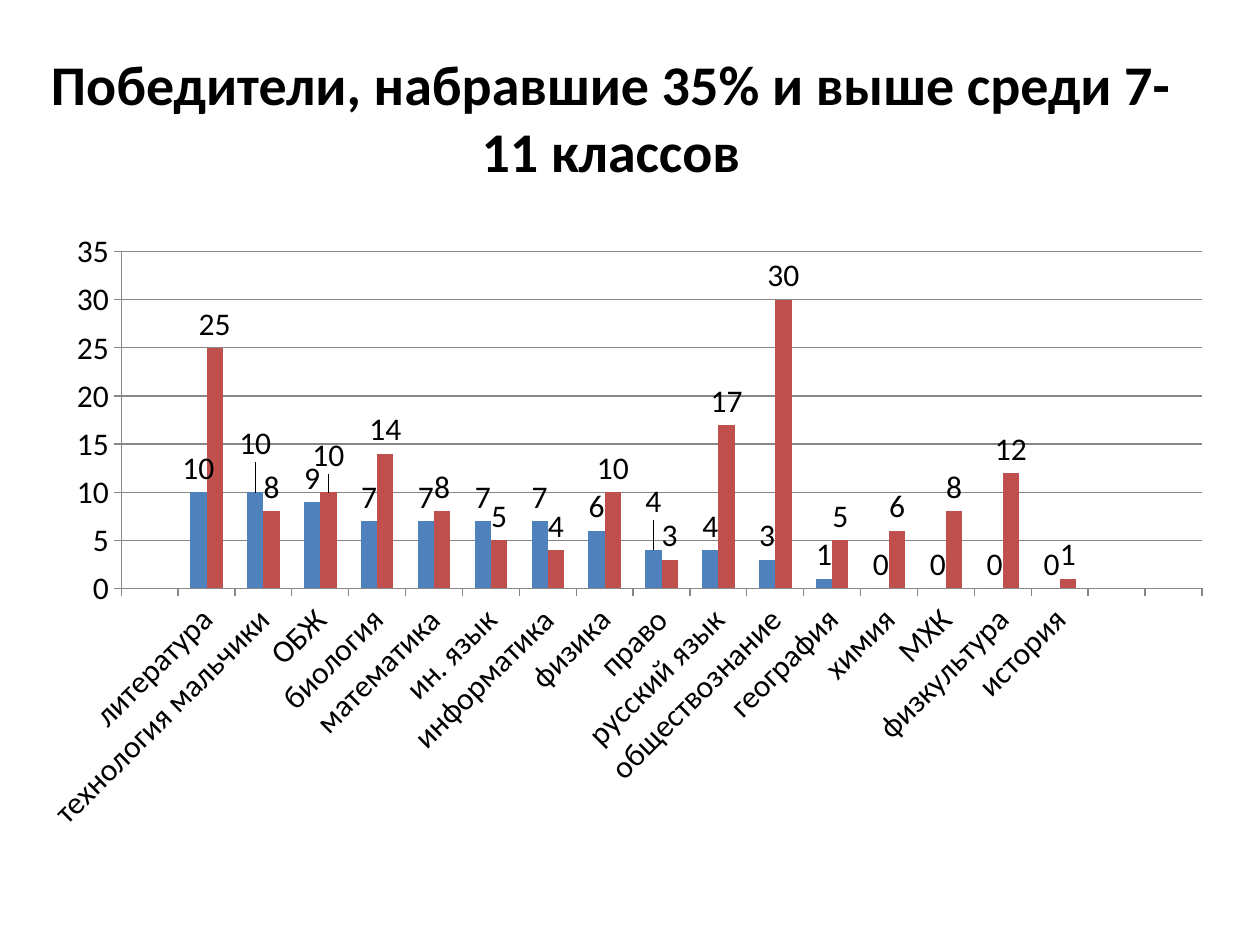
from dataclasses import dataclass, field

from lxml.etree import SubElement
from pptx import Presentation
from pptx.chart.data import CategoryChartData
from pptx.chart.series import BarSeries
from pptx.dml.color import RGBColor
from pptx.enum.chart import XL_CHART_TYPE as ChartType
from pptx.enum.chart import XL_LABEL_POSITION as LabelPosition
from pptx.enum.chart import XL_TICK_MARK as TickMark
from pptx.enum.text import MSO_ANCHOR as Anchor
from pptx.enum.text import PP_ALIGN as Align
from pptx.oxml.ns import qn
from pptx.util import Pt

BLACK = RGBColor(0x00, 0x00, 0x00)
GRAY = RGBColor(0x86, 0x86, 0x86)
BLUE = RGBColor(0x4F, 0x81, 0xBD)
RED = RGBColor(0xC0, 0x50, 0x4D)
FONT = "Calibri"

TITLE = "Победители, набравшие 35% и выше среди 7-11 классов"
SUBJECTS = [
    "литература", "технология мальчики", "ОБЖ", "биология", "математика",
    "ин. язык", "информатика", "физика", "право", "русский язык",
    "обществознание", "география", "химия", "МХК", "физкультура", "история",
]


@dataclass
class Bars:
    name: str
    color: RGBColor
    values: list[int]
    # Vertical label shift per point, as a share of the chart height
    label_shifts: dict[int, float] = field(default_factory=dict)


BAR_SETS = [
    Bars("Series 1", BLUE, [10, 10, 9, 7, 7, 7, 7, 6, 4, 4, 3, 1, 0, 0, 0, 0],
         {2: -0.04, 9: -0.04}),
    Bars("Series 2", RED, [25, 8, 10, 14, 8, 5, 4, 10, 3, 17, 30, 5, 6, 8, 12, 1],
         {3: -0.02}),
]


def add_layout(parent, index: int, **settings: object) -> None:
    """Insert a manual chart layout at the given child index."""
    for old in parent.findall(qn("c:layout")):
        parent.remove(old)
    layout = SubElement(parent, qn("c:layout"))
    parent.insert(index, layout)
    manual = SubElement(layout, qn("c:manualLayout"))
    for name, value in settings.items():
        SubElement(manual, qn(f"c:{name}")).set("val", str(value))


def style_bars(series: BarSeries, bars: Bars) -> None:
    series.format.fill.solid()
    series.format.fill.fore_color.rgb = bars.color
    series.invert_if_negative = False
    labels = series.data_labels
    labels.show_value = True
    labels.position = LabelPosition.OUTSIDE_END
    for point, shift in bars.label_shifts.items():
        series.points[point].data_label.position = LabelPosition.OUTSIDE_END
        label = labels._element.xpath(f"c:dLbl[c:idx/@val='{point}']")[0]
        add_layout(label, 1, x=0, y=shift)


def add_title(page) -> None:
    box = page.shapes.title
    box.left, box.top, box.width, box.height = Pt(14.4), Pt(21.6), Pt(669.6), Pt(90)
    box.text_frame.vertical_anchor = Anchor.MIDDLE
    para = box.text_frame.paragraphs[0]
    para.alignment = Align.CENTER
    span = para.add_run()
    span.text = TITLE
    span.font.name, span.font.size, span.font.bold = FONT, Pt(32), True
    span.font.color.rgb = BLACK


def add_chart(page) -> None:
    # One empty slot before the subjects and two after
    data = CategoryChartData()
    data.categories = ["", *SUBJECTS, "", ""]
    for bars in BAR_SETS:
        data.add_series(bars.name, [None, *bars.values, None, None])
    chart = page.shapes.add_chart(
        ChartType.COLUMN_CLUSTERED, Pt(14.4), Pt(126), Pt(686.16), Pt(356.4), data
    ).chart
    chart.has_title = chart.has_legend = False
    chart.font.name, chart.font.size = FONT, Pt(18)
    chart.font.color.rgb = BLACK

    plot = chart.plots[0]
    plot.gap_width, plot.overlap, plot.vary_by_categories = 150, 0, False
    for series, bars in zip(plot.series, BAR_SETS):
        style_bars(series, bars)

    # Axes
    for axis in (chart.category_axis, chart.value_axis):
        axis.major_tick_mark, axis.minor_tick_mark = TickMark.OUTSIDE, TickMark.NONE
        axis.format.line.color.rgb = GRAY
        axis.format.line.width = Pt(0.75)
        axis.tick_labels.font.size = Pt(18)
    slanted = chart.category_axis._element.find(qn("c:txPr")).find(qn("a:bodyPr"))
    slanted.set("rot", "-2700000")
    slanted.set("vert", "horz")
    values = chart.value_axis
    values.minimum_scale, values.maximum_scale, values.major_unit = 0, 35, 5
    values.has_major_gridlines = True
    values.major_gridlines.format.line.color.rgb = GRAY
    values.major_gridlines.format.line.width = Pt(0.75)

    # Plot position inside the chart
    area = chart._chartSpace.chart.plotArea
    add_layout(area, 0, layoutTarget="inner", xMode="edge", yMode="edge",
               x=0.08, y=0.05, w=0.9, h=0.54)


def main() -> None:
    deck = Presentation()
    deck.slide_width, deck.slide_height = Pt(720), Pt(540)
    page = deck.slides.add_slide(deck.slide_layouts[5])
    add_title(page)
    add_chart(page)
    deck.save("out.pptx")


if __name__ == "__main__":
    main()
